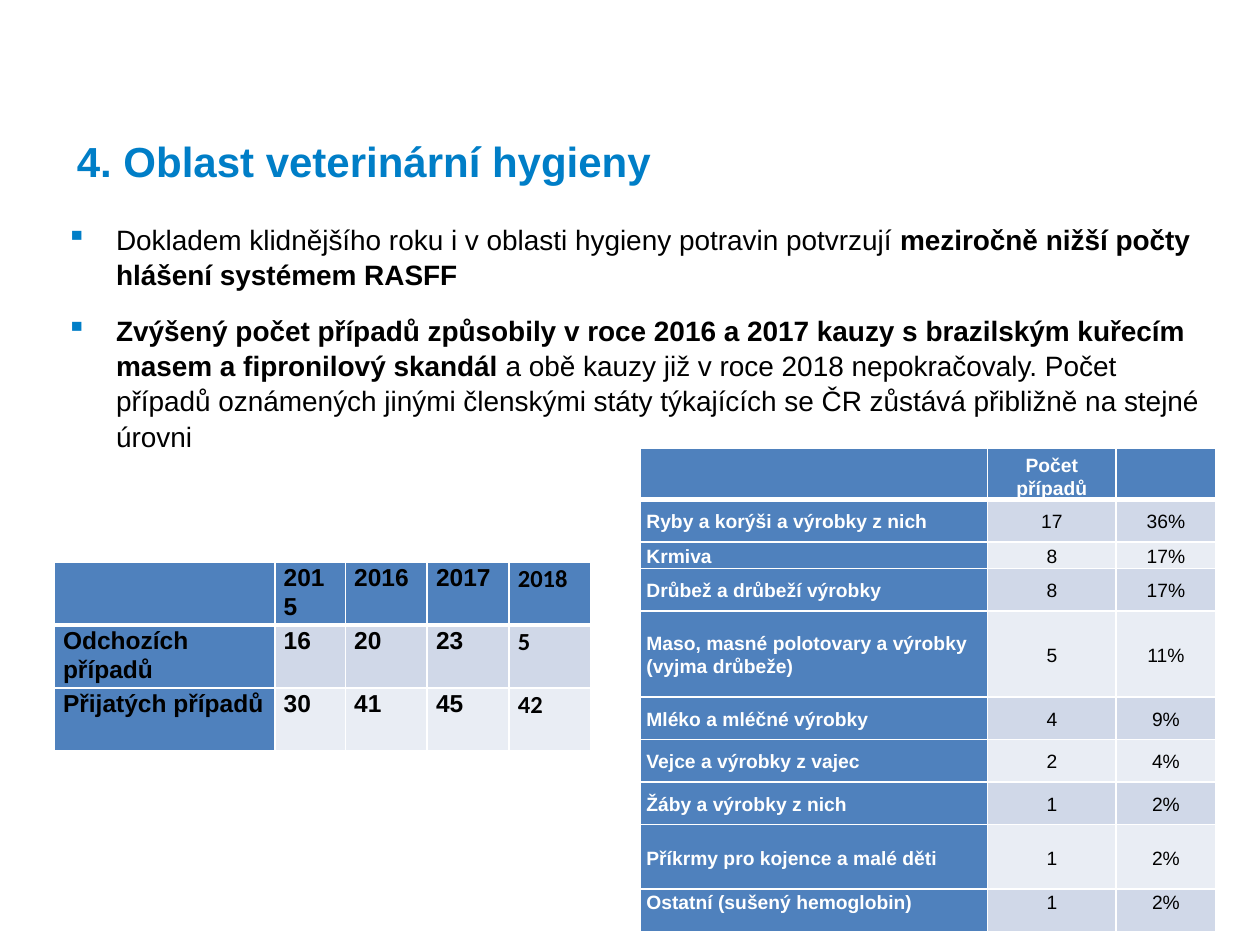
import pptx
import pptx.dml.color
import pptx.enum.text
import pptx.oxml
import pptx.oxml.ns
import pptx.util
from pptx.util import Cm

RGBColor = pptx.dml.color.RGBColor
ACCENT = RGBColor(0x00, 0x7E, 0xC7)
HEADER = RGBColor(0x4F, 0x81, 0xBD)
BAND_DARK = RGBColor(0xD0, 0xD8, 0xE8)
BAND_LIGHT = RGBColor(0xE9, 0xED, 0xF4)
BLACK = RGBColor(0, 0, 0)
WHITE = RGBColor(0xFF, 0xFF, 0xFF)
NS = pptx.oxml.ns.nsdecls("a")
CENTER = pptx.enum.text.PP_ALIGN.CENTER
ANCHOR = pptx.enum.text.MSO_ANCHOR


def add_run(paragraph, text, size, color, bold, font="Arial"):
    run = paragraph.add_run()
    run.text = text
    run.font.size = pptx.util.Pt(size)
    run.font.name = font
    run.font.bold = bold
    run.font.color.rgb = color


def add_grid(position, widths, heights, margins):
    grid = slide.shapes.add_table(
        len(heights), len(widths), *position, Cm(sum(widths)), Cm(sum(heights))
    ).table
    for column, width in zip(grid.columns, widths):
        column.width = Cm(width)
    for r, height in enumerate(heights):
        grid.rows[r].height = Cm(height)
        for c in range(len(widths)):
            cell = grid.cell(r, c)
            side, top = margins
            cell.margin_left = cell.margin_right = Cm(side)
            cell.margin_top, cell.margin_bottom = Cm(top), 0
            for edge in "LRTB":
                thick = (r, edge) in ((0, "B"), (1, "T"))
                cell._tc.get_or_add_tcPr().append(pptx.oxml.parse_xml(
                    f'<a:ln{edge} {NS} w="{38100 if thick else 12700}"><a:solidFill>'
                    f'<a:srgbClr val="{WHITE}"/></a:solidFill></a:ln{edge}>'
                ))
            cell.fill.solid()
            band = BAND_DARK if r % 2 else BAND_LIGHT
            cell.fill.fore_color.rgb = HEADER if r == 0 or c == 0 else band
            cell.text_frame.paragraphs[0].line_spacing = 1.07
    return grid


deck = pptx.Presentation()
deck.slide_width, deck.slide_height = Cm(25.4), Cm(19.05)
slide = deck.slides.add_slide(deck.slide_layouts[6])

findings = [
    [("Dokladem klidnějšího roku i v oblasti hygieny potravin potvrzují ", False),
     ("meziročně nižší počty hlášení systémem RASFF", True)],
    [("Zvýšený počet případů způsobily v roce 2016 a 2017 kauzy s brazilským kuřecím "
      "masem a fipronilový skandál", True),
     (" a obě kauzy již v roce 2018 nepokračovaly. Počet případů oznámených jinými "
      "členskými státy týkajících se ČR zůstává přibližně na stejné úrovni", False)],
]
body = slide.shapes.add_textbox(Cm(1.09), Cm(4.32), Cm(23.39), Cm(13.79)).text_frame
body.word_wrap = True
for i, finding in enumerate(findings):
    paragraph = body.add_paragraph() if i else body.paragraphs[0]
    properties = paragraph._p.get_or_add_pPr()
    properties.set("marL", str(Cm(1)))
    properties.set("indent", str(-Cm(1)))
    properties.append(pptx.oxml.parse_xml(
        f'<a:buClr {NS}><a:srgbClr val="{ACCENT}"/></a:buClr>'))
    properties.append(pptx.oxml.parse_xml(f'<a:buChar {NS} char="▪"/>'))
    paragraph.line_spacing = 1.05
    paragraph.space_before = pptx.util.Pt(6 if i else 0)
    paragraph.space_after = pptx.util.Pt(6)
    for text, bold in finding:
        add_run(paragraph, text, 16, BLACK, bold)

title = slide.shapes.add_textbox(Cm(1.3), Cm(2.51), Cm(22.83), Cm(1.8)).text_frame
title.word_wrap = True
title.margin_top = Cm(0.23)
add_run(title.paragraphs[0], "4. Oblast veterinární hygieny", 24, ACCENT, True)

yearly_counts = [
    ("", "2015", "2016", "2017", "2018"),
    ("Odchozích případů", "16", "20", "23", "5"),
    ("Přijatých případů", "30", "41", "45", "42"),
]
yearly = add_grid((Cm(1.09), Cm(11.33)), [4.45, 1.42, 1.65, 1.65, 1.65],
                  [0.86, 0.86, 1.27], (0.18, 0))
for r, record in enumerate(yearly_counts):
    for c, text in enumerate(record):
        if text:
            add_run(yearly.cell(r, c).text_frame.paragraphs[0], text, 14, BLACK, True,
                    "Calibri" if c == 4 else "Arial")

commodity_counts = [
    ("", "Počet případů", "", 0.86),
    ("Ryby a korýši a výrobky z nich", "17", "36%", 0.86),
    ("Krmiva", "8", "17%", 0.5),
    ("Drůbež a drůbeží výrobky", "8", "17%", 0.86),
    ("Maso, masné polotovary a výrobky (vyjma drůbeže)", "5", "11%", 1.73),
    ("Mléko a mléčné výrobky", "4", "9%", 0.86),
    ("Vejce a výrobky z vajec", "2", "4%", 0.86),
    ("Žáby a výrobky z nich", "1", "2%", 0.86),
    ("Příkrmy pro kojence a malé děti", "1", "2%", 1.3),
    ("Ostatní (sušený hemoglobin)", "1", "2%", 0.86),
]
commodities = add_grid((Cm(12.9), Cm(9.04)), [7.01, 2.59, 2.01],
                       [record[-1] for record in commodity_counts], (0.13, 0.03))
anchors = [ANCHOR.BOTTOM] + [ANCHOR.MIDDLE] * 8 + [ANCHOR.TOP]
for r, record in enumerate(commodity_counts):
    for c, text in enumerate(record[:3]):
        if text:
            cell = commodities.cell(r, c)
            cell.vertical_anchor = anchors[r]
            paragraph = cell.text_frame.paragraphs[0]
            paragraph.space_after = pptx.util.Pt(8)
            if c:
                paragraph.alignment = CENTER
            heading = r == 0 or c == 0
            add_run(paragraph, text, 11, WHITE if heading else BLACK, heading)

deck.save("out.pptx")
